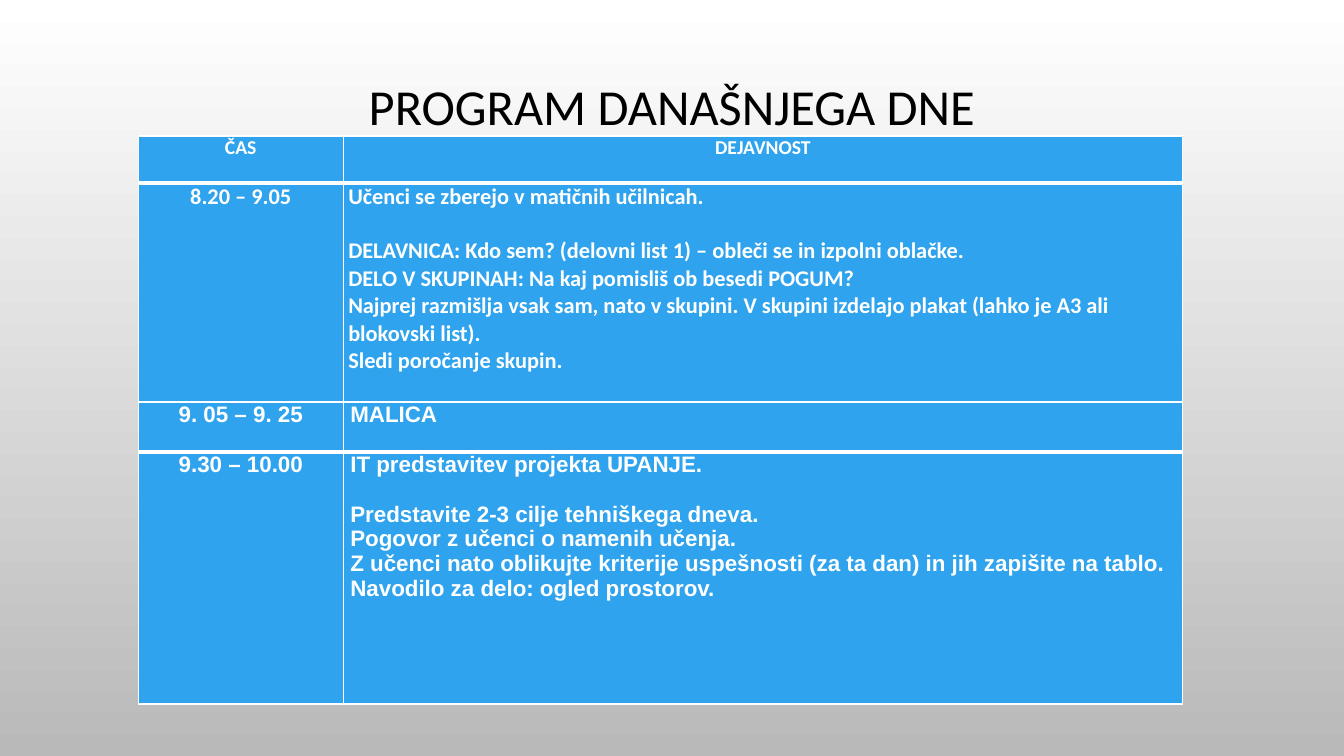
import dataclasses
import typing

import lxml.etree
import pptx
import pptx.dml.color
import pptx.enum.text
import pptx.oxml.ns
import pptx.util

Pt = pptx.util.Pt
qn = pptx.oxml.ns.qn
ALIGN = pptx.enum.text.PP_ALIGN
ANCHOR = pptx.enum.text.MSO_ANCHOR


@dataclasses.dataclass(frozen=True)
class Theme:
    white: str = "FFFFFF"
    grey: str = "B9B9B9"
    black: str = "000000"
    blue: str = "2FA3EE"
    sans: str = "Calibri"
    plain: str = "Arial"
    title: float = 36
    head: float = 14
    body: float = 16
    thin: float = 1
    thick: float = 3


THEME = Theme()


@dataclasses.dataclass(frozen=True)
class Row:
    """One table row; gap is the space before the second line of the task."""
    time: str
    task: tuple[str, ...]
    height: float
    font: str
    size: float = THEME.body
    inset: float = 3.6
    centred: bool = False
    gap: float = 0
    top: float = THEME.thin
    bottom: float = THEME.thin


COLS = (146.4, 599.6)
ROWS = (
    Row("ČAS", ("DEJAVNOST",), 33.5, THEME.sans, THEME.head,
        centred=True, bottom=THEME.thick),
    Row("8.20 – 9.05", (
        "Učenci se zberejo v matičnih učilnicah.",
        "DELAVNICA: Kdo sem? (delovni list 1) – obleči se in izpolni oblačke.",
        "DELO V SKUPINAH: Na kaj pomisliš ob besedi POGUM?",
        "Najprej razmišlja vsak sam, nato v skupini. V skupini izdelajo plakat "
        "(lahko je A3 ali blokovski list).",
        "Sledi poročanje skupin.",
    ), 156.5, THEME.sans, gap=19.5, top=THEME.thick),
    Row("9. 05 – 9. 25", ("MALICA",), 35.7, THEME.plain, inset=5.1,
        bottom=THEME.thick),
    Row("9.30 – 10.00", (
        "IT predstavitev projekta UPANJE.",
        "Predstavite 2-3 cilje tehniškega dneva.",
        "Pogovor z učenci o namenih učenja.",
        "Z učenci nato oblikujte kriterije uspešnosti (za ta dan) in jih "
        "zapišite na tablo.",
        "Navodilo za delo: ogled prostorov.",
    ), 180, THEME.plain, inset=5.1, gap=17.9, top=THEME.thick),
)


def tint(code: str) -> pptx.dml.color.RGBColor:
    return pptx.dml.color.RGBColor.from_string(code)


def apply(target: typing.Any, values: dict[str, typing.Any]) -> None:
    for name, value in values.items():
        setattr(target, name, value)


def write(frame: typing.Any, lines: tuple[str, ...], font: dict[str, typing.Any],
          form: dict[str, typing.Any], gap: float = 0) -> None:
    """Fill a text frame, with a gap before its second paragraph."""
    for index, line in enumerate(lines):
        para = frame.add_paragraph() if index else frame.paragraphs[0]
        run = para.add_run()
        run.text = line
        apply(para, form)
        if index == 1:
            para.space_before = Pt(gap)
        color = font["color"]
        apply(run.font, {k: v for k, v in font.items() if k != "color"})
        run.font.color.rgb = tint(color)


def edge(cell: typing.Any, row: Row) -> None:
    """Draw the four borders of a cell; call this before its fill is set."""
    props = cell._tc.get_or_add_tcPr()
    widths = {"L": THEME.thin, "R": THEME.thin, "T": row.top, "B": row.bottom}
    for side, width in widths.items():
        line = lxml.etree.SubElement(props, qn(f"a:ln{side}"), w=str(Pt(width)))
        fill = lxml.etree.SubElement(line, qn("a:solidFill"))
        lxml.etree.SubElement(fill, qn("a:srgbClr"), val=THEME.white)


def draw_back(slide: typing.Any) -> None:
    fill = slide.background.fill
    fill.gradient()
    fill.gradient_angle = 270
    for stop, code, place in zip(fill.gradient_stops, (THEME.white, THEME.grey), (0, 1)):
        stop.color.rgb = tint(code)
        stop.position = place


def draw_title(slide: typing.Any) -> None:
    box = slide.shapes.add_textbox(Pt(72), Pt(49), Pt(816), Pt(58.3))
    frame = box.text_frame
    apply(frame, {"word_wrap": True, "vertical_anchor": ANCHOR.MIDDLE})
    write(frame, ("PROGRAM DANAŠNJEGA DNE",),
          {"name": THEME.sans, "size": Pt(THEME.title), "color": THEME.black},
          {"alignment": ALIGN.CENTER, "line_spacing": 0.9})


def draw_table(slide: typing.Any) -> None:
    high = sum(row.height for row in ROWS)
    table = slide.shapes.add_table(len(ROWS), len(COLS), Pt(98.8), Pt(97.2),
                                   Pt(sum(COLS)), Pt(high)).table
    apply(table, {"first_row": False, "horz_banding": False})
    for col, width in zip(table.columns, COLS):
        col.width = Pt(width)
    for index, row in enumerate(ROWS):
        table.rows[index].height = Pt(row.height)
        font = {"name": row.font, "size": Pt(row.size), "bold": True,
                "color": THEME.white}
        for cell, lines, centred in zip(table.rows[index].cells,
                                        ((row.time,), row.task),
                                        (True, row.centred)):
            apply(cell, {"margin_left": Pt(row.inset), "margin_right": Pt(row.inset),
                         "margin_top": 0, "margin_bottom": 0,
                         "vertical_anchor": ANCHOR.TOP})
            edge(cell, row)
            cell.fill.solid()
            cell.fill.fore_color.rgb = tint(THEME.blue)
            side = ALIGN.CENTER if centred else ALIGN.LEFT
            write(cell.text_frame, lines, font, {"alignment": side}, row.gap)


def main() -> None:
    deck = pptx.Presentation()
    apply(deck, {"slide_width": Pt(960), "slide_height": Pt(540)})
    slide = deck.slides.add_slide(deck.slide_layouts[6])
    draw_back(slide)
    draw_title(slide)
    draw_table(slide)
    deck.save("out.pptx")


if __name__ == "__main__":
    main()
